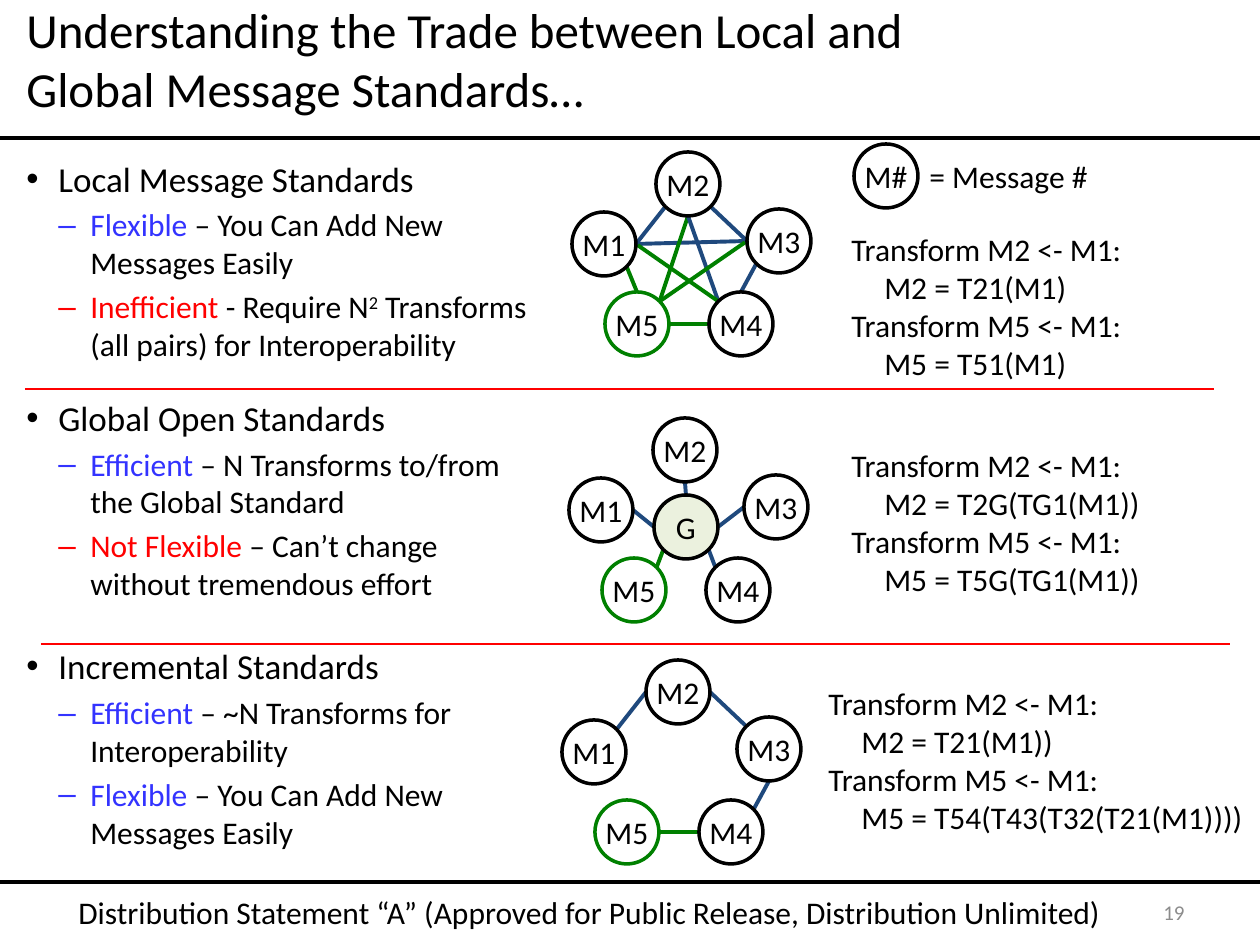
import math

from lxml import etree
from pptx import Presentation
from pptx.dml.color import RGBColor
from pptx.enum.shapes import MSO_CONNECTOR, MSO_SHAPE
from pptx.enum.text import MSO_ANCHOR, PP_ALIGN
from pptx.oxml.ns import qn
from pptx.util import Emu, Pt

SCALE = 914400 / 126
STRAIGHT, ELLIPSE = MSO_CONNECTOR.STRAIGHT, MSO_SHAPE.OVAL
TOP, MIDDLE = MSO_ANCHOR.TOP, MSO_ANCHOR.MIDDLE
LEFT, CENTER, RIGHT = PP_ALIGN.LEFT, PP_ALIGN.CENTER, PP_ALIGN.RIGHT

BLACK = RGBColor(0x00, 0x00, 0x00)
WHITE = RGBColor(0xFF, 0xFF, 0xFF)
GRAY = RGBColor(0x8C, 0x8C, 0x8C)
RED = RGBColor(0xFF, 0x00, 0x00)
BLUE = RGBColor(0x33, 0x33, 0xFF)
NAVY = RGBColor(0x1F, 0x49, 0x7D)
GREEN = RGBColor(0x00, 0x80, 0x00)
PALE_GREEN = RGBColor(0xEB, 0xF1, 0xDE)

NODE = 64
# Connection sites of a circle, counted anticlockwise from the top
N, NW, W, SW, S, SE, E, NE = range(8)
RING = {"M5": (605, 292), "M4": (709, 292), "M3": (747, 209),
        "M2": (656, 152), "M1": (572, 212)}
HUB = {"G": (657, 229)}

# Offset of the ring, nodes, links (node, site, node, site, colour)
DIAGRAMS = [
    (0, 0, RING, [
        ("M1", E, "M3", W, NAVY), ("M2", S, "M5", NE, GREEN),
        ("M2", S, "M4", NW, NAVY), ("M1", E, "M4", NW, GREEN),
        ("M5", NE, "M3", W, GREEN), ("M5", E, "M4", W, GREEN),
        ("M4", N, "M3", SW, NAVY), ("M3", W, "M2", SE, NAVY),
        ("M1", E, "M2", SW, NAVY), ("M1", SE, "M5", N, GREEN)]),
    (-3, 266, HUB | RING, [
        ("G", SW, "M5", NE, GREEN), ("G", SE, "M4", NW, NAVY),
        ("M1", E, "G", W, NAVY), ("M3", W, "G", E, NAVY),
        ("G", N, "M2", S, NAVY)]),
    (-10, 508, RING, [
        ("M4", W, "M5", E, GREEN), ("M1", NE, "M2", W, NAVY),
        ("M3", S, "M4", NE, NAVY), ("M3", NW, "M2", E, NAVY)]),
]

# Heading, space before it in points, items as (keyword, colour, rest)
SECTIONS = [
    ("Local Message Standards", 0, [
        ("Flexible", BLUE, [" – You Can Add New Messages Easily"]),
        ("Inefficient", RED,
         [" - Require N", "2", " Transforms (all pairs) for Interoperability"])]),
    ("Global Open Standards", 19, [
        ("Efficient", BLUE, [" – N Transforms to/from the Global Standard"]),
        ("Not Flexible", RED, [" – Can’t change without tremendous effort"])]),
    ("Incremental Standards", 24.5, [
        ("Efficient", BLUE, [" – ~N Transforms for Interoperability"]),
        ("Flexible", BLUE, [" – You Can Add New Messages Easily"])]),
]

# Left, top, width, results for M2 and M5
TRANSFORMS = [
    (839, 224, 312, "T21(M1)", "T51(M1)"),
    (839, 440, 316, "T2G(TG1(M1))", "T5G(TG1(M1))"),
    (816, 678, 438, "T21(M1))", "T54(T43(T32(T21(M1))))"),
]


def px(length):
    return Emu(round(length * SCALE))


def style(font, size, color=BLACK):
    font.name = "Calibri"
    font.size = Pt(size)
    font.color.rgb = color


def add_line(page, start, end, color, weight):
    line = page.shapes.add_connector(STRAIGHT, *map(px, (*start, *end)))
    line.line.color.rgb = color
    line.line.width = Pt(weight)
    etree.SubElement(line._element.spPr, qn("a:effectLst"))


def add_text(page, frame, text, size, color=BLACK, align=LEFT, anchor=TOP, wrap=True):
    box = page.shapes.add_textbox(*map(px, frame))
    text_frame = box.text_frame
    text_frame.word_wrap = wrap
    text_frame.vertical_anchor = anchor
    text_frame.text = text
    for para in text_frame.paragraphs:
        para.alignment = align
        for span in para.runs:
            style(span.font, size, color)
    return text_frame


def add_node(page, label, left, top):
    node = page.shapes.add_shape(ELLIPSE, px(left), px(top), px(NODE), px(NODE))
    node.shadow.inherit = False
    node.fill.solid()
    node.fill.fore_color.rgb = PALE_GREEN if label == "G" else WHITE
    node.line.color.rgb = GREEN if label == "M5" else BLACK
    node.line.width = Pt(2)
    text_frame = node.text_frame
    text_frame.margin_left = text_frame.margin_right = 0
    text_frame.margin_top = text_frame.margin_bottom = 0
    text_frame.vertical_anchor = MIDDLE
    text_frame.word_wrap = False
    text_frame.text = label
    para = text_frame.paragraphs[0]
    para.alignment = CENTER
    style(para.runs[0].font, 18)


def site_point(corner, site):
    """Return the point of a connection site on the node's rim."""
    angle = math.radians(90 + 45 * site)
    radius = NODE / 2
    return (corner[0] + radius * (1 + math.cos(angle)),
            corner[1] + radius * (1 - math.sin(angle)))


def add_diagram(page, shift_x, shift_y, nodes, links):
    corners = {label: (x + shift_x, y + shift_y) for label, (x, y) in nodes.items()}
    for first, first_site, second, second_site, color in links:
        add_line(page, site_point(corners[first], first_site),
                 site_point(corners[second], second_site), color, 2.25)
    for label, corner in corners.items():
        add_node(page, label, *corner)


def add_bullet(para, mark, margin, space_before):
    properties = para._p.get_or_add_pPr()
    properties.set("marL", str(px(margin)))
    properties.set("indent", str(px(-32)))
    etree.SubElement(properties, qn("a:buFont")).set("typeface", "Arial")
    etree.SubElement(properties, qn("a:buChar")).set("char", mark)
    para.space_before = Pt(space_before)


def add_span(para, text, size, color=BLACK):
    span = para.add_run()
    span.text = text
    style(span.font, size, color)
    return span


def add_outline(page):
    text_frame = add_text(page, (14, 151, 540, 718), "", 20)
    for number, (heading, space, items) in enumerate(SECTIONS):
        para = text_frame.add_paragraph() if number else text_frame.paragraphs[0]
        add_bullet(para, "•", 32, space)
        add_span(para, heading, 20)
        for keyword, color, rest in items:
            para = text_frame.add_paragraph()
            add_bullet(para, "–", 64, 3.6)
            add_span(para, keyword, 18, color)
            for text in rest:
                span = add_span(para, text, 18)
                if text == "2":
                    span.font._element.set("baseline", "30000")


def add_transforms(page, left, top, width, to_m2, to_m5):
    text = (f"Transform M2 <- M1:\n\tM2 = {to_m2}\n"
            f"Transform M5 <- M1:\n\tM5 = {to_m5}")
    text_frame = add_text(page, (left, top, width, 165), text, 18, wrap=False)
    if left + width > 1200:
        text_frame.margin_right = 0
    for para in text_frame.paragraphs:
        tabs = etree.SubElement(para._p.get_or_add_pPr(), qn("a:tabLst"))
        etree.SubElement(tabs, qn("a:tab"), pos=str(px(33)), algn="l")


def main():
    deck = Presentation()
    deck.slide_width, deck.slide_height = px(1260), px(945)
    page = deck.slides.add_slide(deck.slide_layouts[6])

    for y in (138, 882):
        add_line(page, (0, y), (1260, y), BLACK, 2.25)
    for x, y in ((25, 389), (41, 644)):
        add_line(page, (x, y), (x + 1189, y), RED, 0.75)

    add_text(page, (14, 11, 1037, 95),
             "Understanding the Trade between Local and\vGlobal Message Standards…",
             28, anchor=MIDDLE)
    add_outline(page)
    for diagram in DIAGRAMS:
        add_diagram(page, *diagram)
    for transforms in TRANSFORMS:
        add_transforms(page, *transforms)

    add_node(page, "M#", 854, 144)
    add_text(page, (917, 151, 185, 50), "= Message #", 18, wrap=False)
    add_text(page, (18, 887, 1143, 50),
             "Distribution Statement “A” (Approved for Public Release, "
             "Distribution Unlimited)", 18, align=CENTER)
    add_text(page, (903, 887, 294, 50), "19", 12, GRAY, RIGHT, MIDDLE)
    deck.save("out.pptx")


if __name__ == "__main__":
    main()
